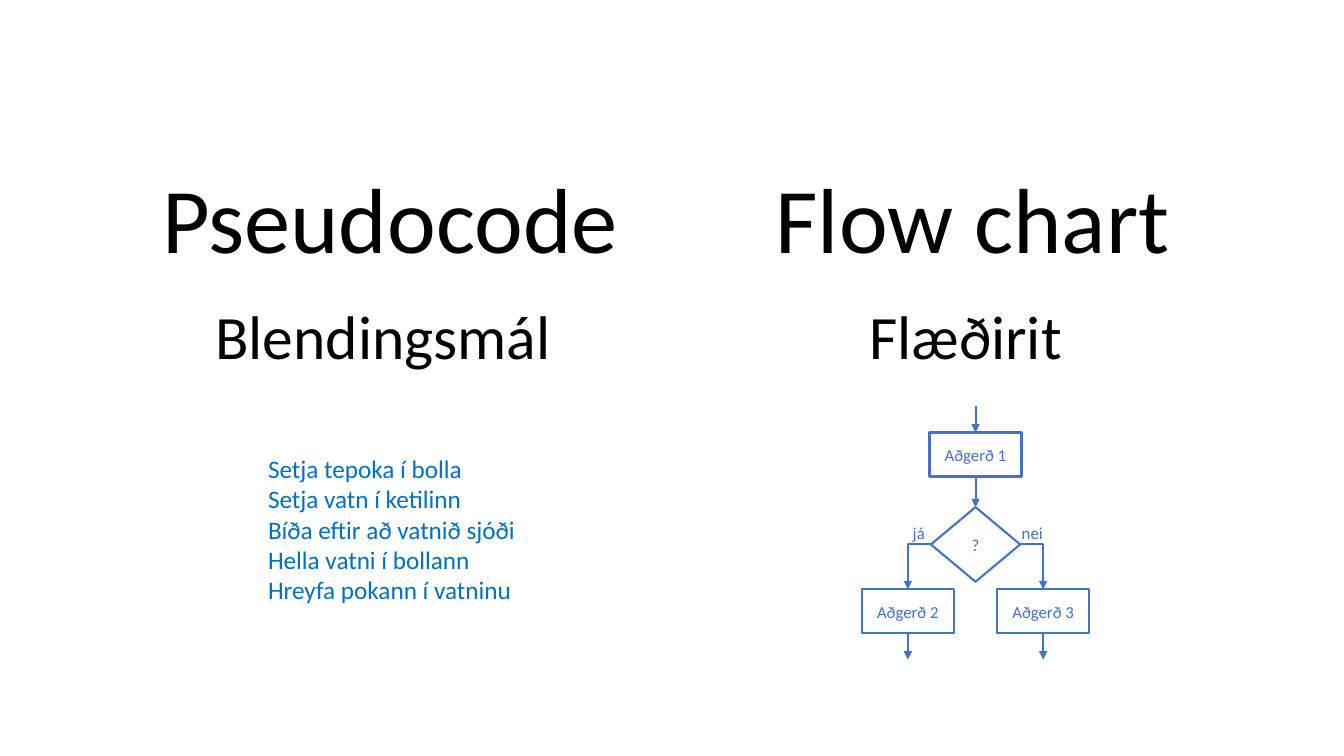
from pptx import Presentation
from pptx import util as u
from pptx.dml.color import RGBColor
from pptx.enum import shapes, text
from pptx.oxml import ns, xmlchemy

COLORS = {"ink": "000000", "code": "0070C0", "chart": "4472C4"}
CENTER = text.PP_ALIGN.CENTER
MIDDLE = text.MSO_ANCHOR.MIDDLE
TOP = text.MSO_ANCHOR.TOP


def write(sp, lines, size=12, color="chart", align=CENTER, anchor=MIDDLE):
    tf = sp.text_frame
    tf.word_wrap = True
    tf.auto_size = text.MSO_AUTO_SIZE.NONE
    tf.vertical_anchor = anchor
    for i, line in enumerate(lines):
        p = tf.add_paragraph() if i else tf.paragraphs[0]
        p.alignment = align
        p.space_before = u.Pt(0)
        p.line_spacing = 1.0
        r = p.add_run()
        r.text = line
        r.font.name = "Calibri"
        r.font.size = u.Pt(size)
        r.font.color.rgb = RGBColor.from_string(COLORS[color])


def place(sp, x, y, w, h):
    sp.left, sp.top, sp.width, sp.height = (u.Cm(v) for v in (x, y, w, h))
    return sp


def textbox(parent, x, y, w, h):
    return parent.add_textbox(*(u.Cm(v) for v in (x, y, w, h)))


def headings(s, title, name, subtitle, x, y, w):
    write(place(title, x, y, w, 3.07), [name], 66, "ink", anchor=TOP)
    write(textbox(s.shapes, x, y + 3.45, w, 2.13), [subtitle], 44, "ink", anchor=TOP)


def pseudocode(body, lines, x, y, w, h):
    write(place(body, x, y, w, h), lines, 18, "code", text.PP_ALIGN.LEFT, TOP)
    for p in body.text_frame.paragraphs:
        pPr = p._p.get_or_add_pPr()
        pPr.set("marL", "0")
        pPr.set("indent", "0")
        pPr.append(xmlchemy.OxmlElement("a:buNone"))


def node(group, kind, label, cx, y, w, h):
    sp = group.shapes.add_shape(kind, *(u.Cm(v) for v in (cx - w / 2, y, w, h)))
    sp.shadow.inherit = False
    sp.fill.background()
    sp.line.color.rgb = RGBColor.from_string(COLORS["chart"])
    sp.line.width = u.Pt(1.5)
    write(sp, [label])


def arrow(group, x1, y1, x2, y2):
    straight = x1 == x2
    kind = shapes.MSO_CONNECTOR.STRAIGHT if straight else shapes.MSO_CONNECTOR.ELBOW
    cxn = group.shapes.add_connector(kind, *(u.Cm(v) for v in (x1, y1, x2, y2)))
    cxn.line.color.rgb = RGBColor.from_string(COLORS["chart"])
    cxn.line.width = u.Pt(1.5)
    spPr = cxn._element.spPr
    if not straight:
        spPr.find(ns.qn("a:prstGeom")).set("prst", "bentConnector2")
    tail = xmlchemy.OxmlElement("a:tailEnd")
    tail.set("type", "triangle")
    cxn.line._get_or_add_ln().append(tail)
    spPr.append(xmlchemy.OxmlElement("a:effectLst"))


def flowchart(s, x, y, w, h):
    group = s.shapes.add_group_shape()
    step_w, step_h, gap = 2.32, 1.11, 0.66
    test_w, test_h = 2.25, 1.88
    cx = x + w / 2
    first_y = y + gap
    test_y = y + 2.54
    mid_y = test_y + test_h / 2
    last_y = y + h - gap - step_h

    arrow(group, cx, y, cx, first_y)
    arrow(group, cx, first_y + step_h, cx, test_y)
    node(group, shapes.MSO_SHAPE.RECTANGLE, "Aðgerð 1", cx, first_y, step_w, step_h)
    node(group, shapes.MSO_SHAPE.DIAMOND, "?", cx, test_y, test_w, test_h)
    for side, answer, label in ((-1, "já", "Aðgerð 2"), (1, "nei", "Aðgerð 3")):
        branch_x = cx + side * (w - step_w) / 2
        arrow(group, cx + side * test_w / 2, mid_y, branch_x, last_y)
        node(group, shapes.MSO_SHAPE.RECTANGLE, label, branch_x, last_y, step_w, step_h)
        arrow(group, branch_x, last_y + step_h, branch_x, y + h)
        write(textbox(group.shapes, cx + side * 1.43 - 0.64, mid_y - 0.74, 1.28, 0.89), [answer])


def main():
    prs = Presentation()
    prs.slide_width, prs.slide_height = u.Cm(33.87), u.Cm(19.05)
    s = prs.slides.add_slide(prs.slide_layouts[1])
    title, body = s.placeholders
    headings(s, title, "Pseudocode", "Blendingsmál ", 2.77, 3.94, 14.12)
    flow_title = textbox(s.shapes, 0, 0, 1, 1)
    headings(s, flow_title, "Flow chart", "Flæðirit ", 17.45, 3.94, 14.12)
    flowchart(s, 21.72, 10.24, 5.73, 6.38)
    steps = [
        "Setja tepoka í bolla",
        "Setja vatn í ketilinn",
        "Bíða eftir að vatnið sjóði",
        "Hella vatni í bollann",
        "Hreyfa pokann í vatninu",
    ]
    pseudocode(body, steps, 6.5, 11.3, 8.97, 4.11)
    prs.save("out.pptx")


if __name__ == "__main__":
    main()
